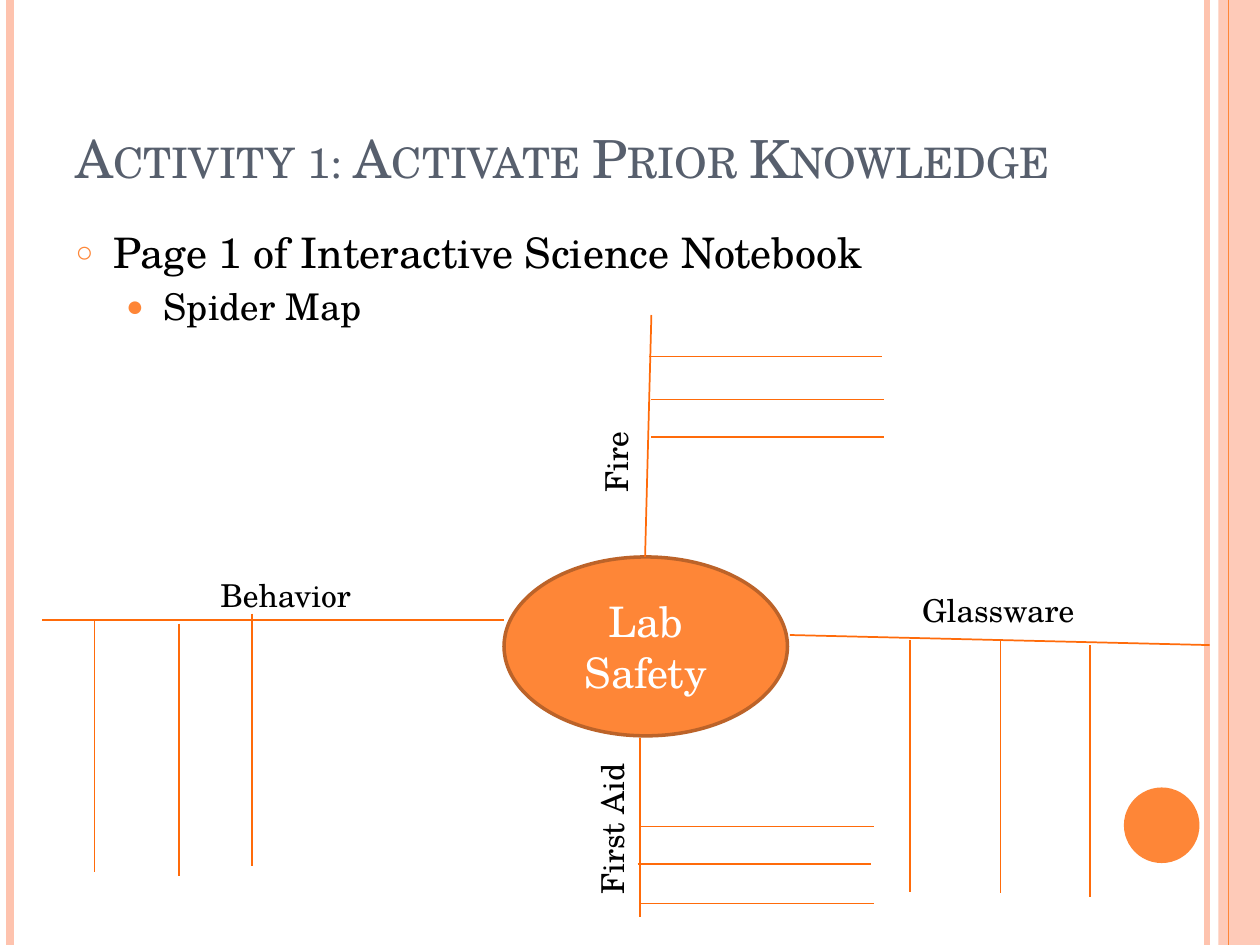
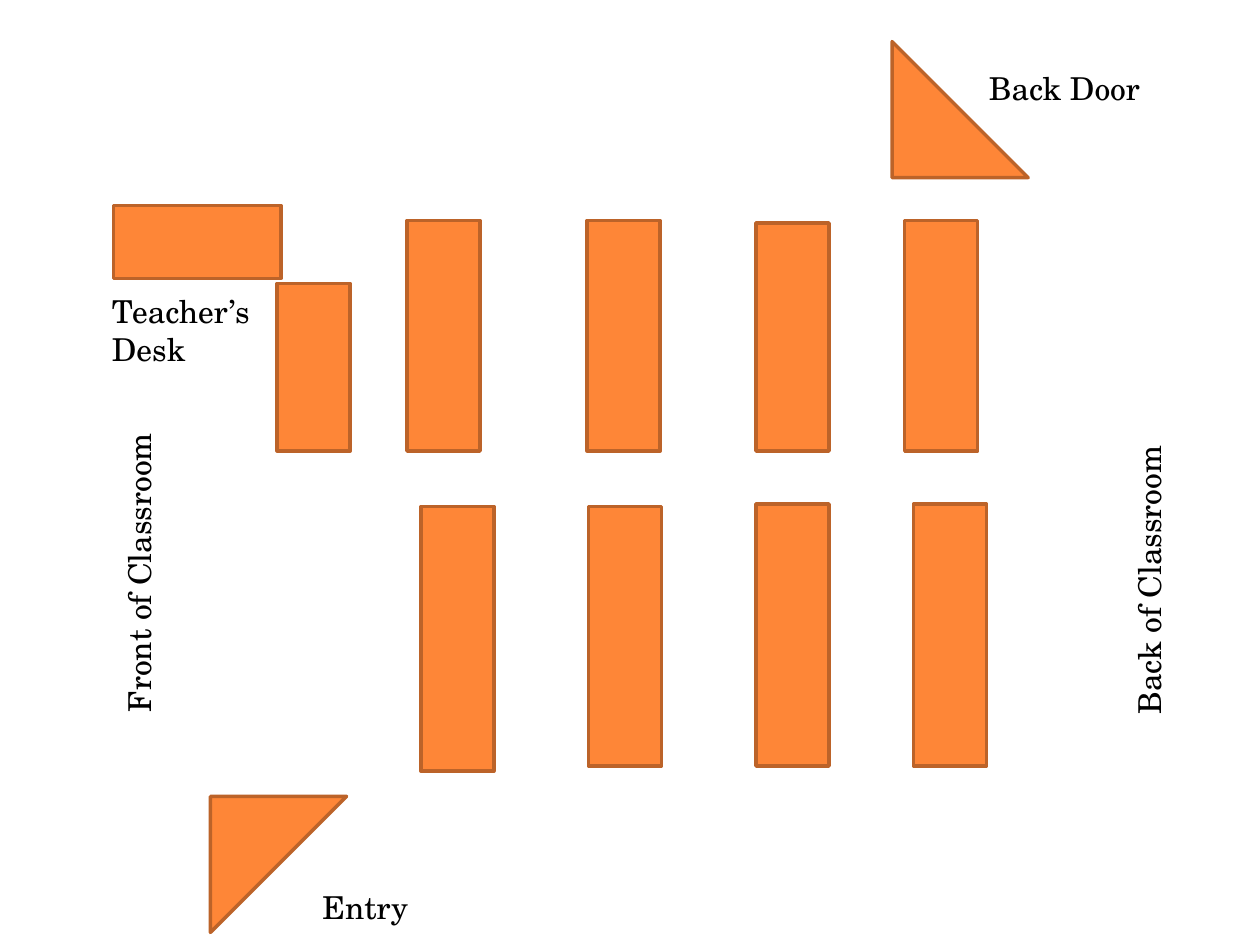
from lxml import etree
from pptx import Presentation
from pptx.dml.color import RGBColor
from pptx.enum import shapes, text
from pptx.oxml import ns
from pptx.util import Inches, Pt

ORANGE = RGBColor(0xFE, 0x86, 0x37)
RUST = RGBColor(0xBC, 0x63, 0x29)
BRANCH = RGBColor(0xFF, 0x6B, 0x0A)
PEACH = RGBColor(0xFE, 0xC3, 0xAE)
SLATE = RGBColor(0x57, 0x5F, 0x6D)
BLACK = RGBColor(0, 0, 0)
WHITE = RGBColor(0xFF, 0xFF, 0xFF)
FONT = "TeX Gyre Schola"
KIND = shapes.MSO_SHAPE


def add_block(slide, kind, box, fill=ORANGE, outline=RUST, rotation=0):
    block = slide.shapes.add_shape(kind, *map(Inches, box))
    block.shadow.inherit = False
    block.rotation = rotation
    block.fill.solid()
    block.fill.fore_color.rgb = fill
    if outline is None:
        block.line.fill.background()
    else:
        block.line.color.rgb = outline
        block.line.width = Pt(2)
    return block


def add_run(paragraph, words, size, color=BLACK):
    run = paragraph.add_run()
    run.text = words
    run.font.name = FONT
    run.font.size = Pt(size)
    run.font.color.rgb = color
    return run


prs = Presentation()
prs.slide_width = Inches(10)
prs.slide_height = Inches(7.5)
spider_map = prs.slides.add_slide(prs.slide_layouts[1])
classroom = prs.slides.add_slide(prs.slide_layouts[6])

title = spider_map.shapes.title
title.left, title.top, title.width, title.height = map(Inches, (0.5, 0.3, 8.17, 1.25))
title.text_frame.vertical_anchor = text.MSO_ANCHOR.BOTTOM
title.text_frame.auto_size = text.MSO_AUTO_SIZE.NONE
heading = title.text_frame.paragraphs[0]
heading.alignment = text.PP_ALIGN.LEFT
heading_run = add_run(heading, "Activity 1: Activate Prior Knowledge", 30, SLATE)
heading_run.font._element.set("cap", "small")

body = spider_map.placeholders[1]
body.left, body.top, body.width, body.height = map(Inches, (0.5, 1.75, 7.83, 1.17))
body.text_frame.auto_size = text.MSO_AUTO_SIZE.NONE
outline_items = [
    ("Page 1 of Interactive Science Notebook", 24, 6, 0.3, "○", 70),
    ("Spider Map", 21, 4, 0.7, "●", 80),
]
for level, (words, size, before, margin, bullet, bullet_size) in enumerate(outline_items):
    item = body.text_frame.add_paragraph() if level else body.text_frame.paragraphs[0]
    item.level = level
    item.space_before = Pt(before)
    add_run(item, words, size)
    props = item._p.get_or_add_pPr()
    props.set("marL", str(Inches(margin)))
    props.set("indent", str(Inches(-0.3)))
    bullet_color = etree.SubElement(props, ns.qn("a:buClr"))
    etree.SubElement(bullet_color, ns.qn("a:srgbClr"), val=str(ORANGE))
    etree.SubElement(props, ns.qn("a:buSzPct"), val=str(bullet_size * 1000))
    etree.SubElement(props, ns.qn("a:buChar"), char=bullet)

side_band = add_block(spider_map, KIND.RECTANGLE, (9.67, 0, 0.33, 7.5), PEACH, None)
band_color = side_band._element.spPr.find(".//" + ns.qn("a:srgbClr"))
etree.SubElement(band_color, ns.qn("a:alpha"), val="87000")
add_block(spider_map, KIND.OVAL, (8.92, 6.25, 0.6, 0.6), outline=None)

topic = add_block(spider_map, KIND.OVAL, (4, 4.42, 2.25, 1.42))
topic.text_frame.word_wrap = True
topic.text_frame.vertical_anchor = text.MSO_ANCHOR.MIDDLE
topic_line = topic.text_frame.paragraphs[0]
topic_line.alignment = text.PP_ALIGN.CENTER
add_run(topic_line, "Lab Safety", 24, WHITE)

rules = [(x, 0, x, 7.5, color, width) for x, color, width in [
    (9.58, PEACH, 3), (0.08, PEACH, 4.5), (9.75, ORANGE, 0.75)]]
branches = [
    (5.12, 4.42, 5.17, 2.5),
    (4, 4.92, 0.33, 4.92),
    (5.08, 5.86, 5.08, 7.28),
    (6.27, 5.04, 9.6, 5.12),
]
across = [(5.15, 2.83), (5.17, 3.17), (5.17, 3.47), (5.09, 6.56), (5.06, 6.86), (5.09, 7.17)]
down = [(0.75, 4.92), (1.42, 4.95), (2, 4.87), (7.22, 5.08), (7.94, 5.09), (8.65, 5.12)]
branches += [(x, y, x + 1.85, y) for x, y in across]
branches += [(x, y, x, y + 2) for x, y in down]
for *ends, color, width in rules + [(*branch, BRANCH, 1) for branch in branches]:
    line = spider_map.shapes.add_connector(shapes.MSO_CONNECTOR.STRAIGHT, *map(Inches, ends))
    line.line.color.rgb = color
    line.line.width = Pt(width)
    etree.SubElement(line._element.spPr, ns.qn("a:effectLst"))

add_block(classroom, KIND.RECTANGLE, (0.9, 1.63, 1.33, 0.58))
add_block(classroom, KIND.RECTANGLE, (2.2, 2.25, 0.58, 1.33))
add_block(classroom, KIND.RIGHT_TRIANGLE, (7.08, 0.33, 1.08, 1.08))
add_block(classroom, KIND.RIGHT_TRIANGLE, (1.67, 6.32, 1.08, 1.08), rotation=90)
student_desks = [
    (3.23, 1.75, 1.83), (4.66, 1.75, 1.83), (6, 1.77, 1.81), (7.18, 1.75, 1.83),
    (3.34, 4.02, 2.1), (4.67, 4.02, 2.06), (6, 4, 2.08), (7.25, 4, 2.08),
]
for left, top, length in student_desks:
    add_block(classroom, KIND.RECTANGLE, (left, top, 0.58, length))

labels = [
    (spider_map, "Fire", (4.54, 3.46, 0.69, 0.4), 270, False),
    (spider_map, "Glassware", (7.22, 4.64, 1.43, 0.4), 0, False),
    (spider_map, "First Aid", (4.23, 6.37, 1.25, 0.4), 270, True),
    (spider_map, "Behavior", (1.65, 4.52, 1.26, 0.4), 0, False),
    (classroom, "Teacher’s Desk", (0.79, 2.27, 1.42, 0.71), 0, True),
    (classroom, "Front of Classroom", (-0.65, 3.8, 3.5, 0.4), 270, True),
    (classroom, "Back of Classroom", (7.37, 3.82, 3.5, 0.4), 270, True),
    (classroom, "Entry", (2.46, 7, 2.04, 0.4), 0, True),
    (classroom, "Back Door", (7.75, 0.5, 1.57, 0.4), 0, True),
]
for slide, words, box, rotation, wraps in labels:
    label = slide.shapes.add_textbox(*map(Inches, box))
    label.rotation = rotation
    label.text_frame.word_wrap = wraps
    label.text_frame.auto_size = text.MSO_AUTO_SIZE.SHAPE_TO_FIT_TEXT
    add_run(label.text_frame.paragraphs[0], words, 18)

prs.save("out.pptx")
